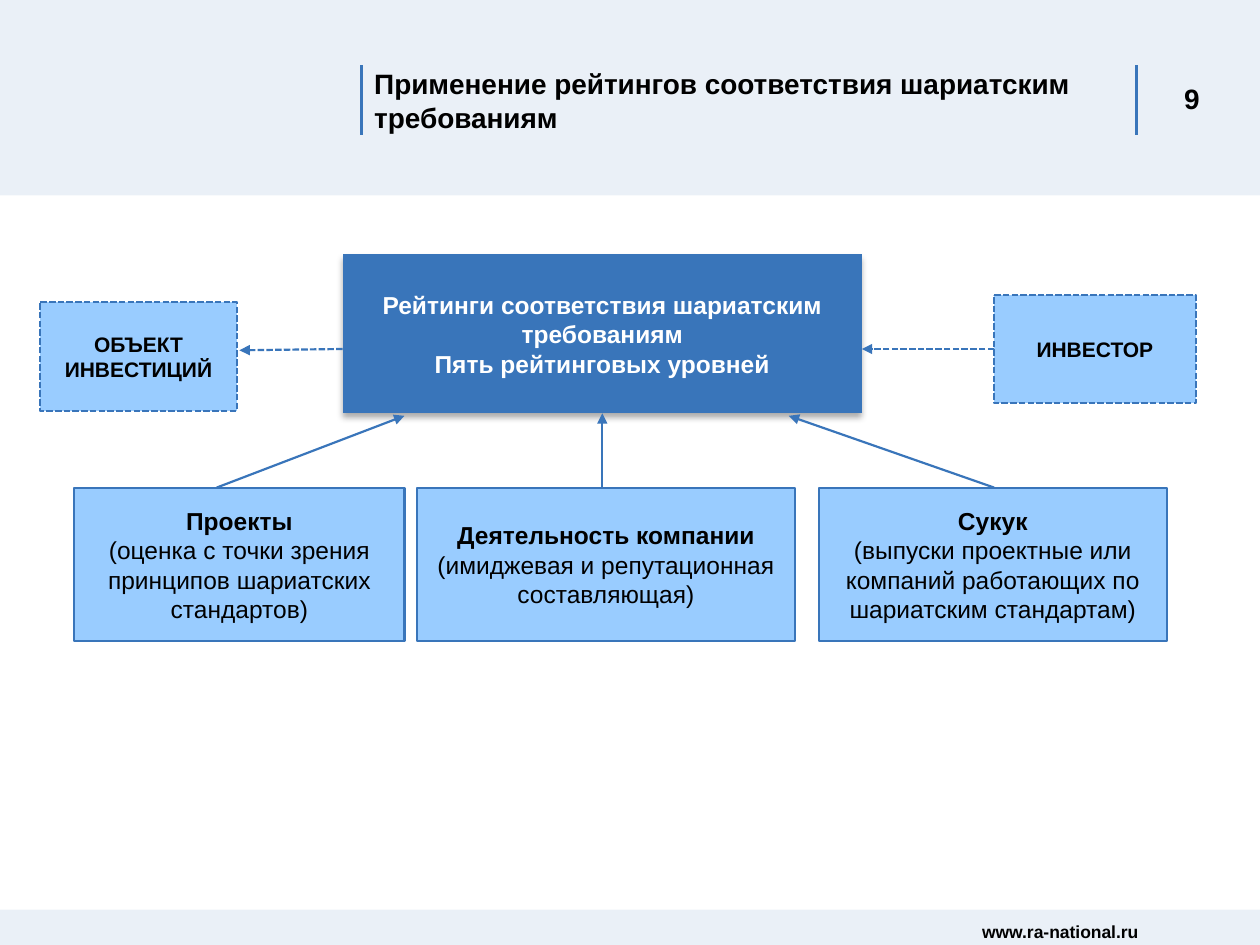
from lxml.etree import SubElement
from pptx import Presentation
from pptx.dml.color import RGBColor
from pptx.enum.dml import MSO_LINE
from pptx.enum.shapes import MSO_CONNECTOR, MSO_SHAPE
from pptx.enum.text import MSO_ANCHOR, MSO_AUTO_SIZE, PP_ALIGN
from pptx.oxml.ns import qn
from pptx.util import Inches, Pt

BLUE, LIGHT_BLUE, BLACK, WHITE = "3975BA", "99CCFF", "000000", "FFFFFF"


def color(hex_value):
    return RGBColor.from_string(hex_value)


def set_alpha(color_element, percent):
    SubElement(color_element, qn("a:alpha"), val=str(percent * 1000))


def write(shape, paragraphs, size, ink=BLACK, align=PP_ALIGN.CENTER):
    """Fill a shape with paragraphs, each a list of (text, bold) runs."""
    frame = shape.text_frame
    frame.word_wrap = True
    frame.auto_size = MSO_AUTO_SIZE.NONE
    frame.vertical_anchor = MSO_ANCHOR.MIDDLE
    for index, runs in enumerate(paragraphs):
        paragraph = frame.add_paragraph() if index else frame.paragraphs[0]
        paragraph.alignment = align
        font = paragraph.font
        font.name, font.size, font.color.rgb = "Arial", Pt(size), color(ink)
        for text, bold in runs:
            run = paragraph.add_run()
            run.text, run.font.bold = text, bold


def add_line(slide, start, end, width=1.25, dashed=False, arrow=True):
    line = slide.shapes.add_connector(
        MSO_CONNECTOR.STRAIGHT, *map(Inches, (*start, *end)))
    line.line.color.rgb = color(BLUE)
    line.line.width = Pt(width)
    if dashed:
        line.line.dash_style = MSO_LINE.SQUARE_DOT
    if arrow:
        SubElement(line.line._get_or_add_ln(), qn("a:tailEnd"), type="triangle")
    SubElement(line._element.spPr, qn("a:effectLst"))


def add_band(slide, box):
    band = slide.shapes.add_shape(MSO_SHAPE.RECTANGLE, *map(Inches, box))
    band.shadow.inherit = False
    band.fill.solid()
    band.fill.fore_color.rgb = color(BLUE)
    set_alpha(band._element.spPr.find(".//" + qn("a:srgbClr")), 10)
    band.line.fill.background()


def add_label(slide, box, text, size, align):
    label = slide.shapes.add_textbox(*map(Inches, box))
    write(label, [[(text, True)]], size, align=align)


def add_process(slide, box, paragraphs, size=14, dashed=False):
    process = slide.shapes.add_shape(
        MSO_SHAPE.FLOWCHART_PROCESS, *map(Inches, box))
    process.shadow.inherit = False
    process.fill.solid()
    process.fill.fore_color.rgb = color(LIGHT_BLUE)
    process.line.color.rgb = color(BLUE)
    process.line.width = Pt(1.25)
    if dashed:
        process.line.dash_style = MSO_LINE.SQUARE_DOT
    write(process, paragraphs, size)


def add_header(slide, box, heading, number):
    left, top, width, height = box
    add_band(slide, box)
    rule_top, rule_height = top + 0.52, 0.55
    title_left, number_left = left + 2.87, left + 9.02
    for x in (title_left, number_left):
        add_line(slide, (x, rule_top), (x, rule_top + rule_height),
                 width=1.5, arrow=False)
    add_label(slide, (number_left, rule_top, 0.6, 0.52), number, 16,
              PP_ALIGN.RIGHT)
    title = slide.shapes.title
    title.left, title.top, title.width, title.height = map(
        Inches, (title_left, rule_top, 5.91, rule_height))
    write(title, [[(heading, True)]], 16, align=PP_ALIGN.LEFT)
    slide.shapes._spTree.append(title._element)  # in front of the band


def add_footer(slide, box, address):
    left, top, width, height = box
    add_band(slide, box)
    add_label(slide, (left + 6.83, top + 0.06, 3.17, 0.22), address, 10,
              PP_ALIGN.CENTER)


def add_ratings(slide, box):
    ratings = slide.shapes.add_shape(
        MSO_SHAPE.FLOWCHART_PROCESS, *map(Inches, box))
    ratings.fill.solid()
    ratings.fill.fore_color.rgb = color(BLUE)
    ratings.line.fill.background()
    effects = SubElement(ratings._element.spPr, qn("a:effectLst"))
    shadow = SubElement(effects, qn("a:outerShdw"), blurRad=str(Pt(3.5)),
                        dist=str(Pt(2.2)), dir="5400000", rotWithShape="0")
    set_alpha(SubElement(shadow, qn("a:srgbClr"), val=BLACK), 32)
    write(ratings, [[("Рейтинги соответствия шариатским требованиям", True)],
                    [("Пять рейтинговых уровней", True)]], 14, WHITE)


def add_parties(slide, ratings_box):
    """Place the investor and the investment object beside the ratings."""
    left, top, width, height = ratings_box
    right, arrow_y = left + width, top + 0.75
    investor_left, target_left, target_width = right + 1.05, left - 2.4, 1.56
    add_line(slide, (investor_left, arrow_y), (right, arrow_y), dashed=True)
    add_line(slide, (left, arrow_y),
             (target_left + target_width + 0.02, arrow_y + 0.01), dashed=True)
    add_process(slide, (target_left, top + 0.38, target_width, 0.86),
                [[("ОБЪЕКТ ИНВЕСТИЦИЙ", True)]], 12, dashed=True)
    add_process(slide, (investor_left, top + 0.32, 1.6, 0.86),
                [[("ИНВЕСТОР", True)]], 12, dashed=True)


def add_applications(slide, box, ratings_bottom):
    """Place the three rated subjects and their arrows to the ratings."""
    left, top, width, height = box
    projects = [[("Проекты", True)],
                [("(оценка с точки зрения принципов шариатских стандартов)",
                  False)]]
    company = [[("Деятельность компании ", True),
                ("(имиджевая и репутационная составляющая)", False)]]
    sukuk = [[("Сукук", True)],
             [("(выпуски проектные или компаний работающих по "
               "шариатским стандартам)", False)]]
    # offset and width of each subject, arrow start and end, arrow gap
    subjects = [(0, 2.62, projects, 1.13, 2.62, 0.02),
                (2.72, 3, company, 4.19, 4.19, 0),
                (5.91, 2.76, sukuk, 7.3, 5.67, 0.02)]
    for offset, subject_width, paragraphs, start, end, gap in subjects:
        add_process(slide, (left + offset, top, subject_width, height),
                    paragraphs)
        add_line(slide, (left + start, top), (left + end, ratings_bottom + gap))


def main():
    presentation = Presentation()
    presentation.slide_width, presentation.slide_height = Inches(10), Inches(7.5)
    slide = presentation.slides.add_slide(presentation.slide_layouts[5])
    add_footer(slide, (0, 7.22, 10, 0.28), "www.ra-national.ru")
    add_header(slide, (0, 0, 10, 1.55),
               "Применение рейтингов соответствия шариатским требованиям", "9")
    ratings_box = (2.72, 2.02, 4.12, 1.26)
    add_ratings(slide, ratings_box)
    add_applications(slide, (0.59, 3.87, 8.67, 1.22),
                     ratings_box[1] + ratings_box[3])
    add_parties(slide, ratings_box)
    presentation.save("out.pptx")


if __name__ == "__main__":
    main()
